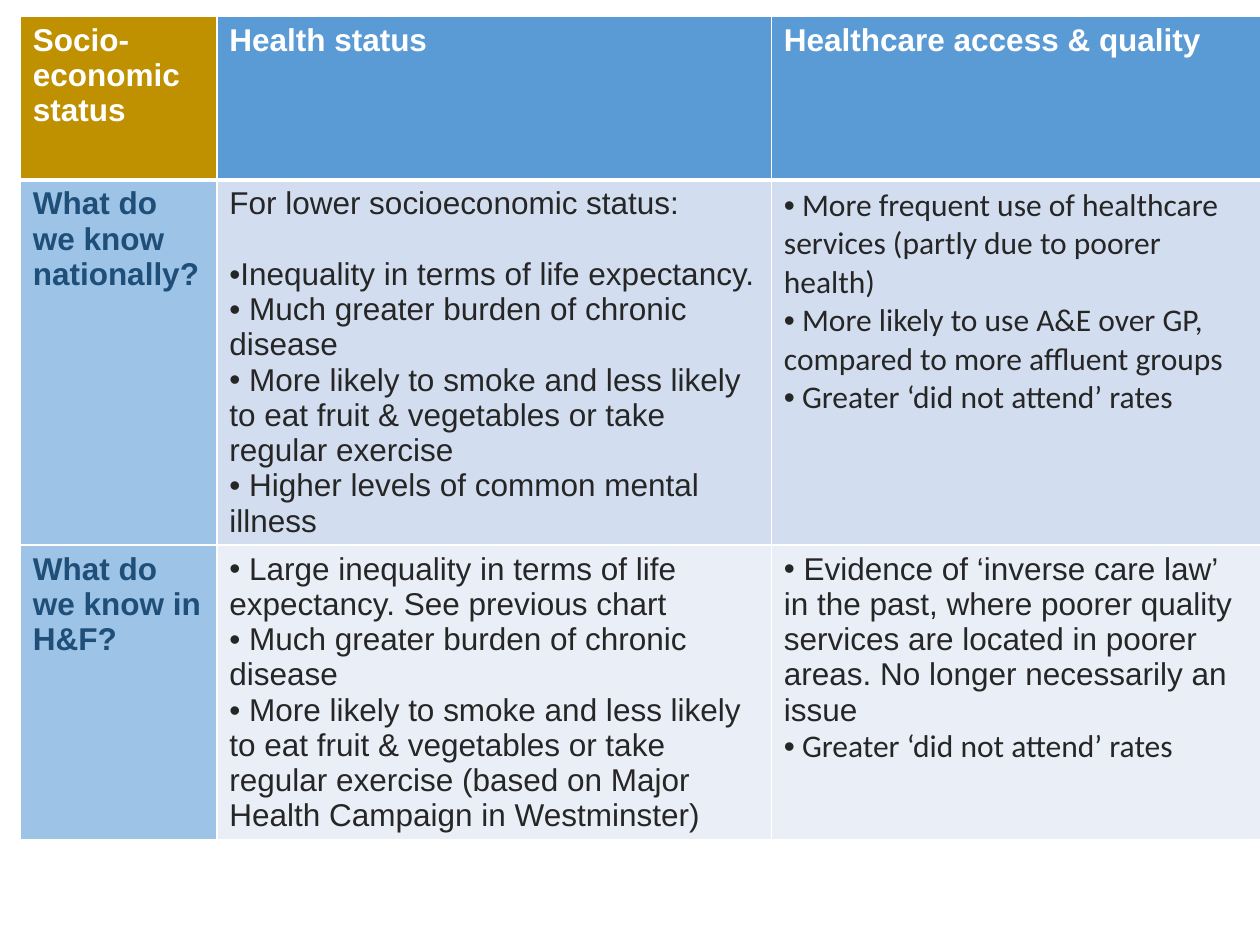
from dataclasses import dataclass

from lxml import etree
from pptx import Presentation
from pptx import util as u
from pptx.dml import color as col
from pptx.oxml import ns


@dataclass(frozen=True)
class Theme:
    sans: str = "Arial"
    alt: str = "Calibri"
    size: int = 18
    gap: int = 20
    thin: int = 1
    thick: int = 3
    white: str = "FFFFFF"
    gold: str = "BF9000"
    blue: str = "5B9BD5"
    sky: str = "9DC3E6"
    navy: str = "1F4E79"
    dark: str = "262626"
    pale: str = "D2DEEF"
    mist: str = "EAEFF7"


T = Theme()


@dataclass(frozen=True)
class Line:
    words: str
    face: str = T.sans
    mark: bool = True
    after: int = 0


@dataclass(frozen=True)
class Box:
    fill: str
    lines: tuple[Line, ...]
    ink: str = T.dark
    bold: bool = False


def label(words: str, fill: str, ink: str) -> Box:
    return Box(fill, (Line(words, mark=False),), ink, True)


MISSED = Line(" Greater ‘did not attend’ rates", T.alt)
BURDEN = Line(" Much greater burden of chronic disease")
HABITS = " More likely to smoke and less likely to eat fruit & vegetables or take regular exercise"

GRID = (
    (
        label("Socio-economic status", T.gold, T.white),
        label("Health status", T.blue, T.white),
        label("Healthcare access & quality", T.blue, T.white),
    ),
    (
        label("What do we know nationally?", T.sky, T.navy),
        Box(T.pale, (
            Line("For lower socioeconomic status:", mark=False, after=T.gap),
            Line("Inequality in terms of life expectancy."),
            BURDEN,
            Line(HABITS),
            Line(" Higher levels of common mental illness"),
        )),
        Box(T.pale, (
            Line(" More frequent use of healthcare services (partly due to poorer health)", T.alt),
            Line(" More likely to use A&E over GP, compared to more affluent groups", T.alt),
            MISSED,
        )),
    ),
    (
        label("What do we know in H&F?", T.sky, T.navy),
        Box(T.mist, (
            Line(" Large inequality in terms of life expectancy. See previous chart"),
            BURDEN,
            Line(HABITS + " (based on Major Health Campaign in Westminster)"),
        )),
        Box(T.mist, (
            Line(" Evidence of ‘inverse care law’ in the past, where poorer quality services "
                 "are located in poorer areas. No longer necessarily an issue"),
            MISSED,
        )),
    ),
)
WIDTHS = (3.96, 11.18, 9.86)
HEIGHTS = (3.3, 5.31, 5.33)


def add_mark(para) -> None:
    props = para._p.get_or_add_pPr()
    etree.SubElement(props, ns.qn("a:buFont"), typeface=T.sans)
    etree.SubElement(props, ns.qn("a:buChar"), char="•")


def add_edge(cell, side: str, width: int) -> None:
    props = cell._tc.get_or_add_tcPr()
    edge = etree.SubElement(props, ns.qn(f"a:ln{side}"), w=str(u.Pt(width)))
    paint = etree.SubElement(edge, ns.qn("a:solidFill"))
    etree.SubElement(paint, ns.qn("a:srgbClr"), val=T.white)


def add_line(para, line: Line, box: Box) -> None:
    para.space_after = u.Pt(line.after)
    if line.mark:
        add_mark(para)
    run = para.add_run()
    run.text = line.words
    font = run.font
    font.name, font.size, font.bold = line.face, u.Pt(T.size), box.bold
    font.color.rgb = col.RGBColor.from_string(box.ink)


def draw_box(cell, box: Box, row: int) -> None:
    top = T.thick if row == 1 else T.thin
    base = T.thick if row == 0 else T.thin
    for side, width in (("L", T.thin), ("R", T.thin), ("T", top), ("B", base)):
        add_edge(cell, side, width)
    cell.fill.solid()
    cell.fill.fore_color.rgb = col.RGBColor.from_string(box.fill)
    frame = cell.text_frame
    for i, line in enumerate(box.lines):
        para = frame.add_paragraph() if i else frame.paragraphs[0]
        add_line(para, line, box)


def main() -> None:
    deck = Presentation()
    deck.slide_width, deck.slide_height = u.Cm(25.4), u.Cm(19.05)
    slide = deck.slides.add_slide(deck.slide_layouts[6])
    table = slide.shapes.add_table(
        len(HEIGHTS), len(WIDTHS), u.Cm(0.41), u.Cm(0.33),
        u.Cm(sum(WIDTHS)), u.Cm(sum(HEIGHTS)),
    ).table
    for i, width in enumerate(WIDTHS):
        table.columns[i].width = u.Cm(width)
    for r, (height, boxes) in enumerate(zip(HEIGHTS, GRID)):
        table.rows[r].height = u.Cm(height)
        for c, box in enumerate(boxes):
            draw_box(table.cell(r, c), box, r)
    deck.save("out.pptx")


if __name__ == "__main__":
    main()
